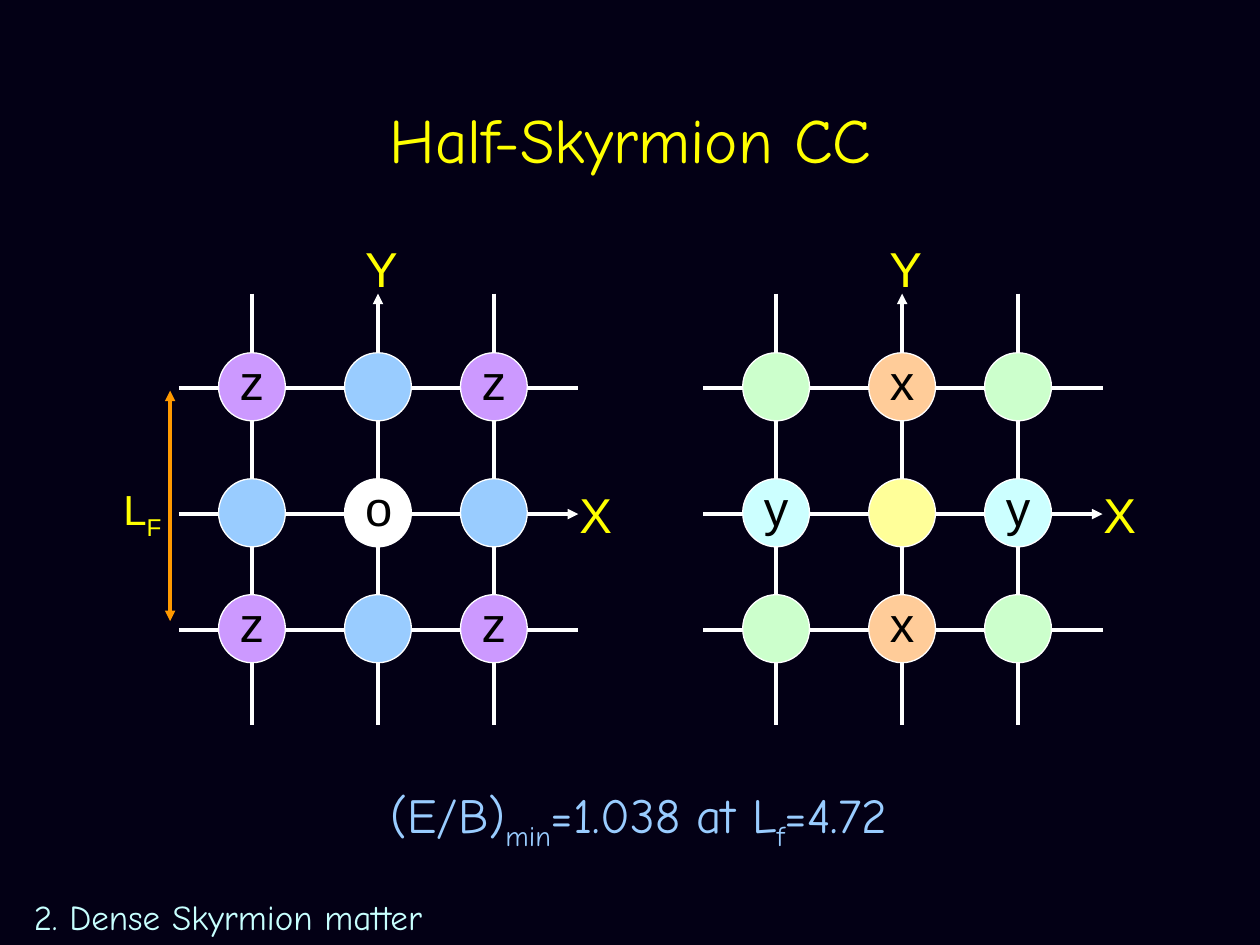
from lxml.etree import SubElement
from pptx import Presentation
from pptx.dml.color import RGBColor
from pptx.enum.shapes import MSO_CONNECTOR as Connector, MSO_SHAPE as Shape
from pptx.enum.text import MSO_ANCHOR as Anchor, MSO_AUTO_SIZE as AutoSize, PP_ALIGN as Align
from pptx.oxml.ns import qn
from pptx.util import Inches, Pt

COLORS = {
    "background": "030015", "white": "FFFFFF", "black": "000000",
    "yellow": "FFFF00", "orange": "FF9900", "violet": "CC99FF",
    "blue": "99CCFF", "green": "CCFFCC", "peach": "FFCC99",
    "cyan": "CCFFFF", "lemon": "FFFF99", "footer": "C7FFFF",
}
HAND_FONT = "Comic Neue"
COLUMNS = (0.58, 1.58, 2.5)
ROWS = (0.75, 1.75, 2.67)
GRID_WIDTH, GRID_HEIGHT = 3.17, 3.42
SITE_WIDTH, SITE_HEIGHT = 0.53, 0.54
LEFT_SITES = (
    (("violet", "z"), ("blue", ""), ("violet", "z")),
    (("blue", ""), ("white", "o"), ("blue", "")),
    (("violet", "z"), ("blue", ""), ("violet", "z")),
)
RIGHT_SITES = (
    (("green", ""), ("peach", "x"), ("green", "")),
    (("cyan", "y"), ("lemon", ""), ("cyan", "y")),
    (("green", ""), ("peach", "x"), ("green", "")),
)


def rgb(name):
    return RGBColor.from_string(COLORS[name])


def add_line(page, start, end, color="white", arrows=()):
    line = page.shapes.add_connector(
        Connector.STRAIGHT, *(Inches(value) for value in (*start, *end)))
    line.line.color.rgb = rgb(color)
    line.line.width = Pt(2)
    SubElement(line._element.spPr, qn("a:effectLst"))
    outline = line.line._get_or_add_ln()
    for arrow in arrows:
        SubElement(outline, qn(f"a:{arrow}"), type="triangle")


def add_text(page, box, parts, size, color, font="Arial", align=Align.LEFT, wrap=False):
    label = page.shapes.add_textbox(*(Inches(value) for value in box))
    frame = label.text_frame
    frame.word_wrap = wrap
    frame.auto_size = AutoSize.SHAPE_TO_FIT_TEXT
    frame.vertical_anchor = Anchor.MIDDLE if wrap else Anchor.TOP
    para = frame.paragraphs[0]
    para.alignment = align
    para.font.size = Pt(size)
    para.font.name = font
    para.font.color.rgb = rgb(color)
    for index, text in enumerate(parts):
        span = para.add_run()
        span.text = text
        if index % 2:
            span.font._element.set("baseline", "-25000")


def add_site(page, x, y, color, letter):
    site = page.shapes.add_shape(
        Shape.OVAL, Inches(x - SITE_WIDTH / 2), Inches(y - SITE_HEIGHT / 2),
        Inches(SITE_WIDTH), Inches(SITE_HEIGHT))
    site.shadow.inherit = False
    site.fill.solid()
    site.fill.fore_color.rgb = rgb(color)
    site.line.color.rgb = rgb("white")
    site.line.width = Pt(0.75)
    if letter:
        add_text(page, (x - 0.2, y - 0.33, 0.4, 0.57), [letter], 28, "black",
                 align=Align.CENTER)


def add_lattice(page, left, top, sites):
    for index, (column, row) in enumerate(zip(COLUMNS, ROWS)):
        is_axis = index == 1
        add_line(page, (left, top + row), (left + GRID_WIDTH, top + row),
                 arrows=["tailEnd"] if is_axis else [])
        add_line(page, (left + column, top), (left + column, top + GRID_HEIGHT),
                 arrows=["headEnd"] if is_axis else [])
    for row, line_of_sites in zip(ROWS, sites):
        for column, (color, letter) in zip(COLUMNS, line_of_sites):
            add_site(page, left + column, top + row - 0.01, color, letter)
    add_text(page, (left + 1.38, top - 0.49, 0.46, 0.57), ["Y"], 28, "yellow")
    add_text(page, (left + 3.08, top + 1.47, 0.46, 0.57), ["X"], 28, "yellow")


def add_cell_length(page, left, top):
    add_line(page, (left + 0.47, top), (left + 0.47, top + 1.83), "orange",
             ["headEnd", "tailEnd"])
    add_text(page, (left, top + 0.69, 0.52, 0.5), ["L", "F"], 24, "yellow")


def add_captions(page):
    add_text(page, (1.92, 0.75, 6.17, 0.7), ["Half-Skyrmion CC"], 36, "yellow",
             HAND_FONT, Align.CENTER, True)
    add_text(page, (3, 6.18, 4.75, 0.57),
             ["(E/B)", "min", "=1.038 at L", "f", "=4.72"], 28, "blue", HAND_FONT)
    add_text(page, (0, 7.06, 3.62, 0.44), ["2. Dense Skyrmion matter"], 20,
             "footer", HAND_FONT, Align.CENTER)


def main():
    deck = Presentation()
    deck.slide_width, deck.slide_height = Inches(10), Inches(7.5)
    page = deck.slides.add_slide(deck.slide_layouts[6])
    page.background.fill.solid()
    page.background.fill.fore_color.rgb = rgb("background")
    add_lattice(page, 1.42, 2.33, LEFT_SITES)
    add_lattice(page, 5.58, 2.33, RIGHT_SITES)
    add_cell_length(page, 0.88, 3.1)
    add_captions(page)
    deck.save("out.pptx")


if __name__ == "__main__":
    main()
